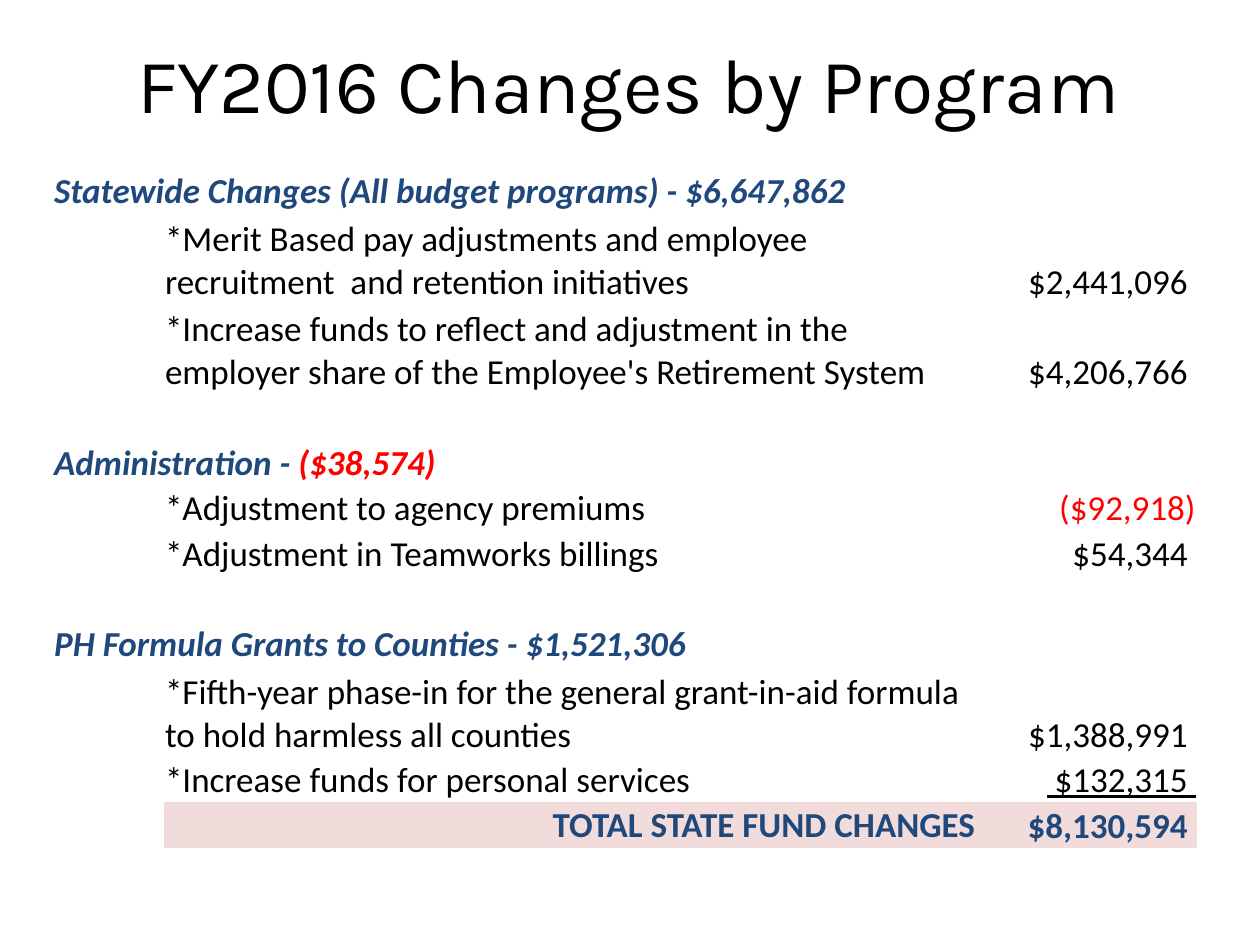
from pptx import Presentation
from pptx.dml.color import RGBColor
from pptx.enum.text import MSO_ANCHOR, PP_ALIGN
from pptx.oxml.ns import qn
from pptx.util import Emu, Pt

PX = 9144  # 100 px to the inch
BLACK, NAVY, RED, PINK = "000000", "1F497D", "FF0000", "F2DCDB"
LINE = 36  # height of a one-line row
COLUMNS = (88, 645, 175)
NO_STYLE = "{2D5ABB26-0587-4C30-8999-92F81FD0307C}"

ITEM = {"size": Pt(20), "name": "Calibri", "bold": False, "italic": False}
HEADING = {**ITEM, "bold": True, "italic": True}
TOTAL = {**ITEM, "bold": True}
LAST = {**ITEM, "underline": True}
TITLE = {"size": Pt(44), "name": "Karla"}

# Each section: heading runs, then (description, amount, lines)
SECTIONS = [
    ([("Statewide Changes (All budget programs) - $6,647,862", NAVY)], [
        ("*Merit Based pay adjustments and employee recruitment  and retention initiatives",
         "$2,441,096 ", 2),
        ("*Increase funds to reflect and adjustment in the employer share of the "
         "Employee's Retirement System", "$4,206,766 ", 2),
    ]),
    ([("Administration - ", NAVY), ("($38,574)", RED)], [
        ("*Adjustment to agency premiums", "($92,918)", 1),
        ("*Adjustment in Teamworks billings", "$54,344 ", 1),
    ]),
    ([("PH Formula Grants to Counties - $1,521,306", NAVY)], [
        ("*Fifth-year phase-in for the general grant-in-aid formula to hold harmless "
         "all counties", "$1,388,991 ", 2),
        ("*Increase funds for personal services", " $132,315 ", 1),
    ]),
]


def px(n):
    return Emu(n * PX)


def color(value):
    return RGBColor.from_string(value)


def write(tf, runs, font, align=PP_ALIGN.LEFT):
    p = tf.paragraphs[0]
    p.alignment = align
    for text, rgb in runs:
        r = p.add_run()
        r.text = text
        for key, value in font.items():
            setattr(r.font, key, value)
        r.font.color.rgb = color(rgb)


def add_title(s, text):
    tf = s.shapes.add_textbox(px(16), px(12), px(967), px(108)).text_frame
    tf.word_wrap = True
    tf.vertical_anchor = MSO_ANCHOR.MIDDLE
    write(tf, [(text, BLACK)], TITLE, PP_ALIGN.CENTER)


def add_grid(s, heights):
    table = s.shapes.add_table(len(heights), len(COLUMNS), px(42), px(133),
                               px(sum(COLUMNS)), px(sum(heights))).table
    table.first_row = table.horz_banding = False
    table._tbl.tblPr.find(qn("a:tableStyleId")).text = NO_STYLE
    for column, width in zip(table.columns, COLUMNS):
        column.width = px(width)
    for row, height in zip(table.rows, heights):
        row.height = px(height)
    for cell in table.iter_cells():
        cell.fill.background()
        cell.vertical_anchor = MSO_ANCHOR.BOTTOM
        cell.margin_left = cell.margin_right = cell.margin_top = px(1)
        cell.margin_bottom = 0
    return table


def add_heading(table, row, runs):
    cell = table.cell(row, 0)
    cell.merge(table.cell(row, 1))
    write(cell.text_frame, runs, HEADING)


def add_item(table, row, text, amount):
    write(table.cell(row, 1).text_frame, [(text, BLACK)], ITEM)
    rgb = RED if amount.startswith("(") else BLACK
    # The amount just above the total is underlined
    font = LAST if row == len(table.rows) - 2 else ITEM
    write(table.cell(row, 2).text_frame, [(amount, rgb)], font, PP_ALIGN.RIGHT)


def add_total(table, label, amount):
    row = len(table.rows) - 1
    for column, text in enumerate((label, amount), start=1):
        cell = table.cell(row, column)
        cell.fill.solid()
        cell.fill.fore_color.rgb = color(PINK)
        write(cell.text_frame, [(text, NAVY)], TOTAL, PP_ALIGN.RIGHT)
    table.cell(row, 1).vertical_anchor = MSO_ANCHOR.MIDDLE


def main():
    prs = Presentation()
    prs.slide_width, prs.slide_height = px(1000), px(750)
    s = prs.slides.add_slide(prs.slide_layouts[6])
    add_title(s, "FY2016 Changes by Program")

    # A heading row, the items and a spacer per section; the total ends the last
    heights = []
    for _, items in SECTIONS:
        heights += [LINE, *(lines * LINE for *_, lines in items), LINE]
    table = add_grid(s, heights)

    row = 0
    for heading, items in SECTIONS:
        add_heading(table, row, heading)
        for i, (text, amount, _) in enumerate(items, start=1):
            add_item(table, row + i, text, amount)
        row += len(items) + 2
    add_total(table, "TOTAL STATE FUND CHANGES", "$8,130,594 ")

    prs.save("out.pptx")


if __name__ == "__main__":
    main()
